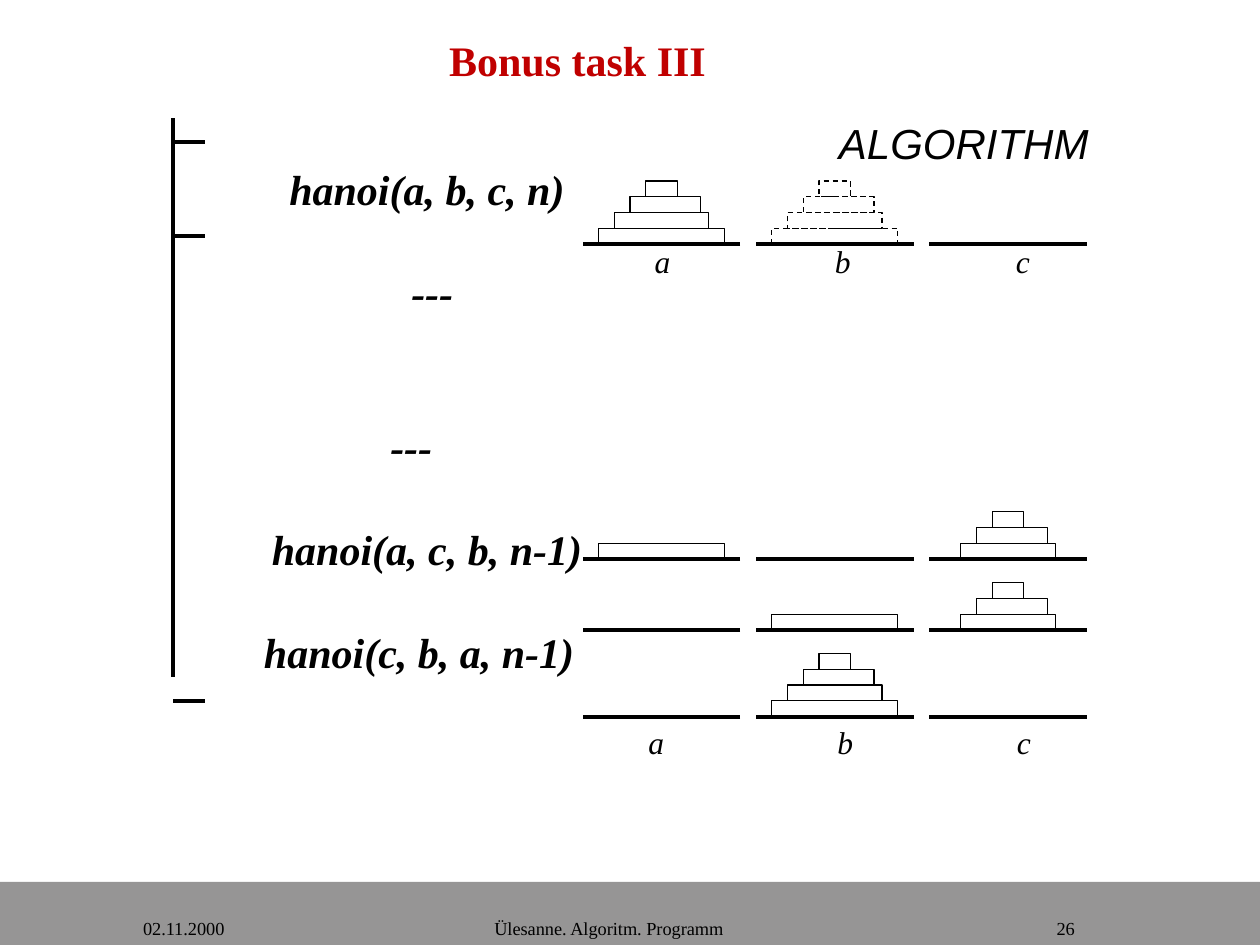
from lxml import etree
from pptx import Presentation
from pptx.dml.color import RGBColor
from pptx.enum.dml import MSO_LINE
from pptx.enum.shapes import MSO_CONNECTOR, MSO_SHAPE
from pptx.enum.text import MSO_ANCHOR, PP_ALIGN
from pptx.oxml.ns import qn
from pptx.util import Pt

LINE, RECT = MSO_CONNECTOR.STRAIGHT, MSO_SHAPE.RECTANGLE
CENTER, TOP, BOTTOM = PP_ALIGN.CENTER, MSO_ANCHOR.TOP, MSO_ANCHOR.BOTTOM
DASH = MSO_LINE.DASH
SERIF, SANS = "Times New Roman", "Arial"
BLACK, RED, GRAY = "000000", "C00000", "969595"

TITLE = "Bonus task III"
# text, space before, left margin, right margin
STEPS = [
    ("hanoi(a, b, c, n)", 0, 0, 0),
    ("---", 30, 6, 0),
    ("---", 59, 0, 18),
    ("hanoi(a, c, b, n-1)", 30, 0, 0),
    ("hanoi(c, b, a, n-1)", 30, 0, 9),
]
FOOTERS = [
    ("02.11.2000", 42, 126),
    ("Ülesanne. Algoritm. Programm", 234, 228),
    ("26", 534, 150),
]
LABELS = [
    (135, [("a", 378.5), ("b", 481.5), ("c", 584.5)]),
    (409.5, [("a", 375), ("b", 483), ("c", 585)]),
]
PEGS, PEG_W = [333, 432, 531], 90
DISC_W, DISC_H = [72, 54, 40.5, 18], 9
FULL, SMALL, LARGEST, EMPTY = (0, 1, 2, 3), (1, 2, 3), (0,), ()
STATES = [
    (139.5, [FULL, FULL, EMPTY]),
    (319.5, [LARGEST, EMPTY, SMALL]),
    (360, [EMPTY, LARGEST, SMALL]),
    (409.5, [EMPTY, FULL, EMPTY]),
]
GHOST = (0, 1)
BRACKET_X, BRACKET_TOP, BRACKET_END = 99, 67.5, 387
TICKS, TICK_W = [81, 135, 400.5], 18


def color(value):
    return RGBColor.from_string(value)


def add_run(p, text, size, font=SERIF, fill=BLACK, bold=False, italic=False):
    r = p.add_run()
    r.text = text
    f = r.font
    f.name, f.size, f.bold, f.italic = font, Pt(size), bold, italic
    f.color.rgb = color(fill)


def place(sp, x, y, w, h):
    sp.left, sp.top, sp.width, sp.height = Pt(x), Pt(y), Pt(w), Pt(h)


def add_text(s, text, x, y, w, h, size, anchor=TOP, wrap=False, **style):
    tf = s.shapes.add_textbox(Pt(x), Pt(y), Pt(w), Pt(h)).text_frame
    tf.word_wrap, tf.vertical_anchor = wrap, anchor
    p = tf.paragraphs[0]
    p.alignment = CENTER
    add_run(p, text, size, **style)


def add_line(s, x1, y1, x2, y2):
    c = s.shapes.add_connector(LINE, Pt(x1), Pt(y1), Pt(x2), Pt(y2))
    c.line.width, c.line.color.rgb = Pt(2.25), color(BLACK)
    etree.SubElement(c._element.spPr, qn("a:effectLst"))


def add_rect(s, x, y, w, h):
    sp = s.shapes.add_shape(RECT, Pt(x), Pt(y), Pt(w), Pt(h))
    sp.shadow.inherit = False
    return sp


def add_disc(s, peg_x, base, size, level, dashed):
    x = peg_x + DISC_H * (size + 1)
    sp = add_rect(s, x, base - DISC_H * (level + 1), DISC_W[size], DISC_H)
    sp.fill.background()
    sp.line.width, sp.line.color.rgb = Pt(0.75), color(BLACK)
    if dashed:
        sp.line.dash_style = DASH


def fill_title(sp):
    place(sp, 148.5, 16, 363, 36)
    tf = sp.text_frame
    tf.vertical_anchor = TOP
    p = tf.paragraphs[0]
    p.alignment = CENTER
    add_run(p, TITLE, 24, fill=RED, bold=True)


def fill_steps(sp):
    place(sp, 54, 90, 380, 298)
    tf = sp.text_frame
    tf.word_wrap, tf.vertical_anchor = True, TOP
    for i, (text, before, left, right) in enumerate(STEPS):
        p = tf.paragraphs[0] if i == 0 else tf.add_paragraph()
        pPr = p._p.get_or_add_pPr()
        for name, value in (("marL", left), ("marR", right), ("indent", 0)):
            pPr.set(name, str(Pt(value)))
        etree.SubElement(pPr, qn("a:buNone"))
        p.alignment, p.space_before = CENTER, Pt(before)
        add_run(p, text, 24, bold=True, italic=True)


def main():
    """Build the Tower of Hanoi bonus task slide."""
    prs = Presentation()
    prs.slide_width, prs.slide_height = Pt(720), Pt(540)
    s = prs.slides.add_slide(prs.slide_layouts[1])
    fill_title(s.shapes.title)
    fill_steps(s.placeholders[1])

    band = add_rect(s, 0, 504, 720, 36)
    band.fill.solid()
    band.fill.fore_color.rgb = color(GRAY)
    band.line.fill.background()
    for text, x, w in FOOTERS:
        add_text(s, text, x, 504, w, 36, 10.5, anchor=BOTTOM, wrap=True)

    for row, (base, stacks) in enumerate(STATES):
        for col, (x, stack) in enumerate(zip(PEGS, stacks)):
            for level, size in enumerate(stack):
                add_disc(s, x, base, size, level, (row, col) == GHOST)
            add_line(s, x + PEG_W, base, x, base)
    for y, names in LABELS:
        for name, center in names:
            add_text(s, name, center - 12, y, 24, 29, 18, italic=True)

    add_line(s, BRACKET_X, BRACKET_TOP, BRACKET_X, BRACKET_END)
    for y in TICKS:
        add_line(s, BRACKET_X, y, BRACKET_X + TICK_W, y)
    add_text(s, "ALGORITHM", 471.5, 63.5, 158.5, 36, 24, font=SANS, italic=True)
    prs.save("out.pptx")


if __name__ == "__main__":
    main()
